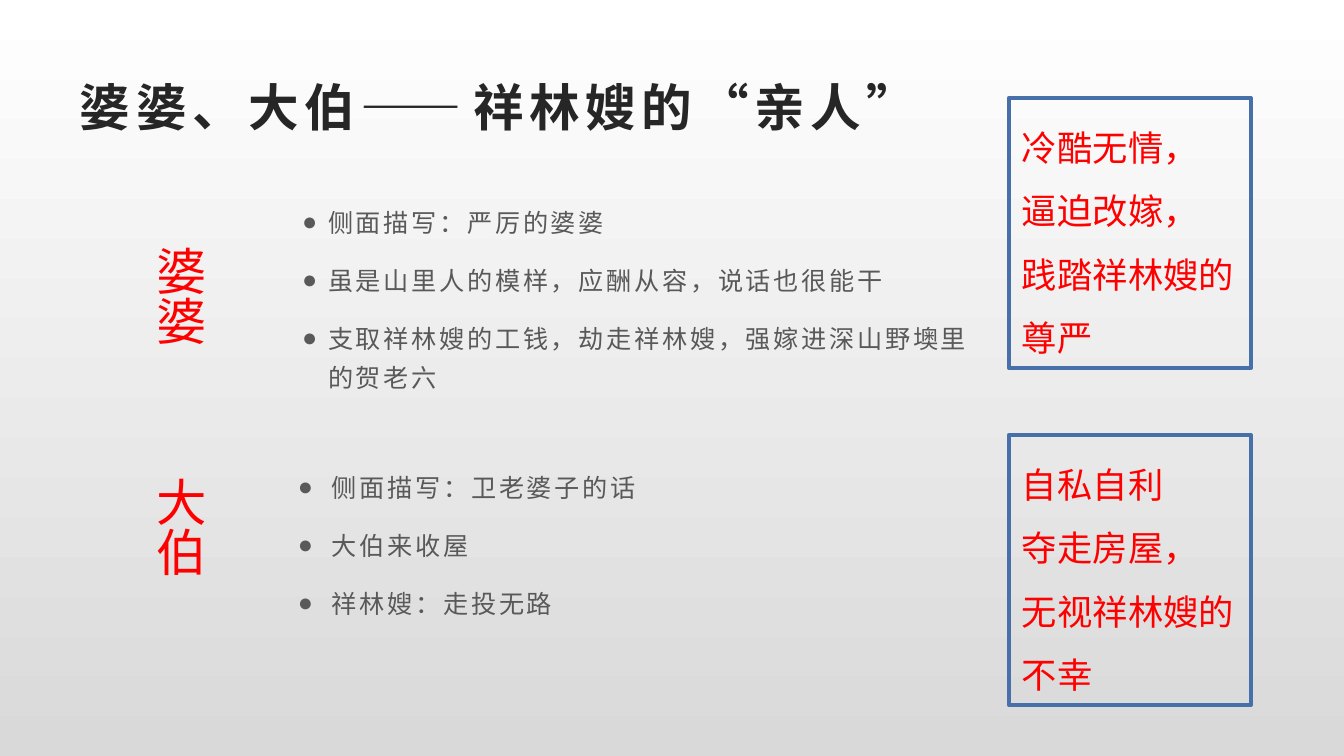
from lxml.etree import SubElement
from pptx import Presentation
from pptx.dml.color import RGBColor
from pptx.enum.shapes import MSO_SHAPE
from pptx.enum.text import MSO_ANCHOR, PP_ALIGN
from pptx.oxml.ns import qn
from pptx.util import Pt

PX = 9144000 / 1344
WHITE = RGBColor(0xFF, 0xFF, 0xFF)
SILVER = RGBColor(0xD9, 0xD9, 0xD9)
DARK = RGBColor(0x26, 0x26, 0x26)
GRAY = RGBColor(0x59, 0x59, 0x59)
RED = RGBColor(0xFF, 0x00, 0x00)
BLUE = RGBColor(0x47, 0x6F, 0xAA)
CJK = "Noto Sans CJK SC"


def px(n):
    return round(n * PX)


def write(sp, text, size, color, font="Arial", bold=False, spc=0, line=1.0,
          after=0, hang=0, inset=(13, 7), anchor=MSO_ANCHOR.TOP, vert=None):
    tf = sp.text_frame
    tf.word_wrap = True
    tf.vertical_anchor = anchor
    tf.margin_left = tf.margin_right = px(inset[0])
    tf.margin_top = tf.margin_bottom = px(inset[1])
    if vert:
        tf._txBody.bodyPr.set("vert", vert)
    for i, words in enumerate(text.split("\n")):
        p = tf.add_paragraph() if i else tf.paragraphs[0]
        p.alignment = PP_ALIGN.LEFT
        p.line_spacing = line
        p.space_after = Pt(after)
        if hang:
            pPr = p._p.get_or_add_pPr()
            pPr.set("marL", str(px(hang)))
            pPr.set("indent", str(-px(hang)))
            SubElement(pPr, qn("a:buFont"), typeface="Arial")
            SubElement(pPr, qn("a:buChar"), char="●")
        r = p.add_run()
        r.text = words
        r.font.size = Pt(size)
        r.font.bold = bold
        r.font.name = font
        r.font.color.rgb = color
        rPr = r._r.get_or_add_rPr()
        rPr.set("lang", "zh-CN")
        rPr.set("spc", str(round(spc * 100)))
        SubElement(rPr, qn("a:ea"), typeface=CJK)


prs = Presentation()
prs.slide_width, prs.slide_height = px(1344), px(756)
s = prs.slides.add_slide(prs.slide_layouts[6])

fill = s.background.fill
fill.gradient()
fill.gradient_angle = 270
for stop, color in zip(fill.gradient_stops, (WHITE, SILVER)):
    stop.color.rgb = color

sp = s.shapes.add_textbox(px(67), px(67), px(1210), px(78))
write(sp, "婆婆、大伯——祥林嫂的“亲人”", 27.1, DARK, bold=True, spc=3,
      anchor=MSO_ANCHOR.MIDDLE)

lists = [
    (191, 720, 26, (13, 7),
     "侧面描写：严厉的婆婆\n虽是山里人的模样，应酬从容，说话也很能干\n"
     "支取祥林嫂的工钱，劫走祥林嫂，强嫁进深山野墺里的贺老六"),
    (459, 656, 34, (9, 4),
     "侧面描写：卫老婆子的话\n大伯来收屋\n祥林嫂：走投无路"),
]
for top, width, hang, inset, text in lists:
    sp = s.shapes.add_textbox(px(289), px(top), px(width), px(200))
    write(sp, text, 13.5, GRAY, font=CJK, spc=1.5, line=1.3, after=10,
          hang=hang, inset=inset)

for top, height, name in [(239, 196, "婆婆"), (470, 157, "大伯")]:
    sp = s.shapes.add_textbox(px(136), px(top), px(87), px(height))
    write(sp, name, 27, RED, vert="eaVert")

verdicts = [
    (98, "冷酷无情，\n逼迫改嫁，\n践踏祥林嫂的尊严"),
    (435, "自私自利\n夺走房屋，\n无视祥林嫂的不幸"),
]
for top, text in verdicts:
    sp = s.shapes.add_shape(MSO_SHAPE.RECTANGLE, px(1009), px(top), px(242), px(270))
    sp.shadow.inherit = False
    sp.fill.background()
    sp.line.color.rgb = BLUE
    sp.line.width = Pt(2.25)
    write(sp, text, 18.9, RED, line=1.5)

prs.save("out.pptx")
